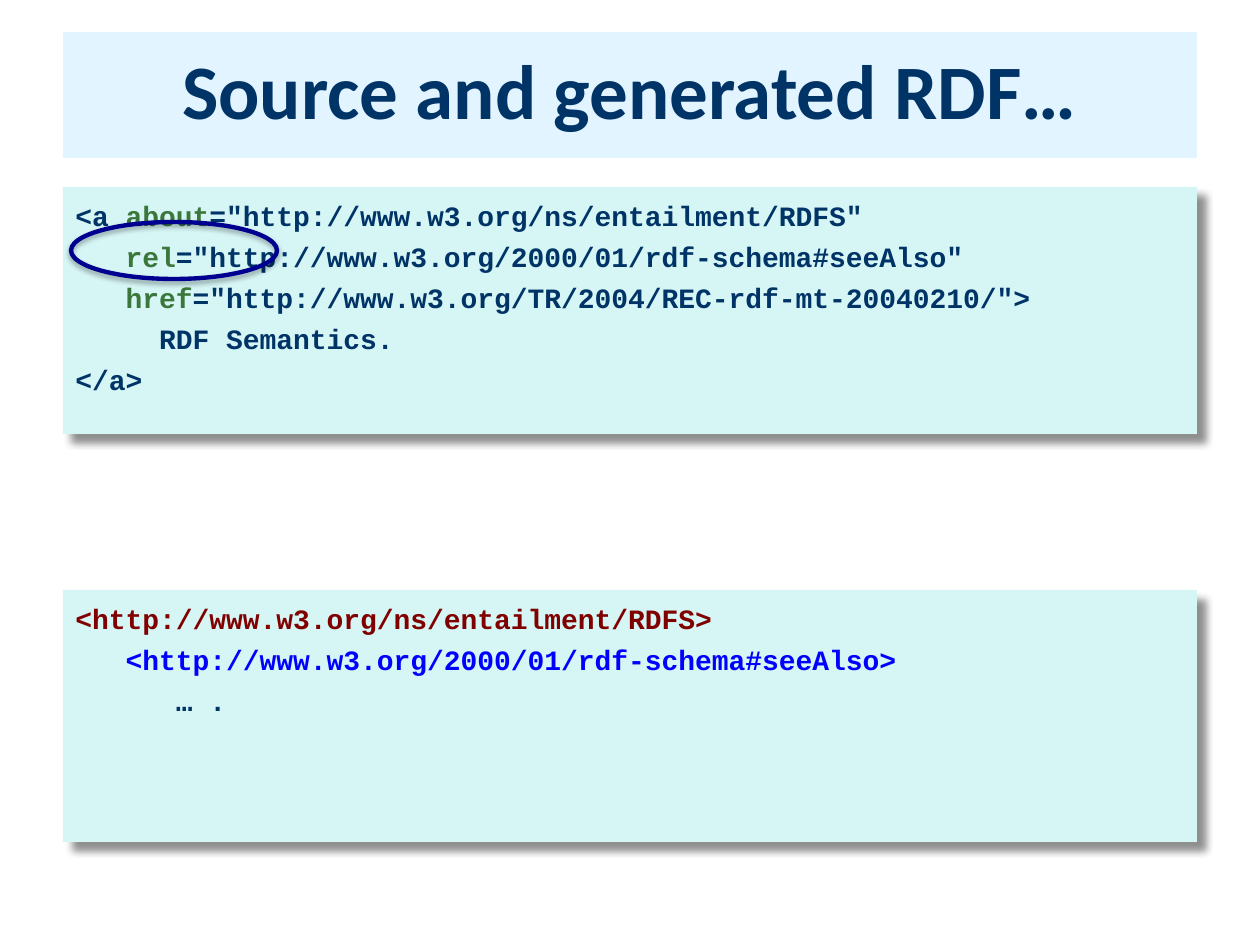
import pptx
import pptx.dml.color
import pptx.enum.shapes
import pptx.enum.text
import pptx.oxml
import pptx.oxml.ns
import pptx.util
from dataclasses import dataclass

PX = 914400 / 126


@dataclass(frozen=True)
class Theme:
    title_fill: str = "E1F4FF"
    code_fill: str = "D6F5F5"
    text: str = "003366"
    attribute: str = "3B773B"
    subject: str = "800000"
    predicate: str = "0000FF"
    ring: str = "000090"
    title_font: str = "Calibri"
    code_font: str = "Courier New"
    title_size: int = 44
    code_size: int = 16
    code_gap: float = 4.2


THEME = Theme()


def px(value):
    return pptx.util.Emu(round(value * PX))


def rgb(value):
    return pptx.dml.color.RGBColor.from_string(value)


def fill_with(shape, color):
    shape.fill.solid()
    shape.fill.fore_color.rgb = rgb(color)


def add_text(paragraph, text, font=THEME.code_font, size=THEME.code_size,
             color=THEME.text, bold=True):
    run = paragraph.add_run()
    run.text = text
    run.font.name = font
    run.font.size = pptx.util.Pt(size)
    run.font.color.rgb = rgb(color)
    run.font.bold = bold


def add_shadow(shape, opacity, blur, distance, angle):
    """Opacity in percent, blur and distance in points, angle in degrees."""
    shape.shadow.inherit = False
    effects = shape._element.spPr.find(pptx.oxml.ns.qn("a:effectLst"))
    effects.append(pptx.oxml.parse_xml(
        f'<a:outerShdw {pptx.oxml.ns.nsdecls("a")} blurRad="{pptx.util.Pt(blur)}" '
        f'dist="{pptx.util.Pt(distance)}" dir="{angle * 60000}" algn="tl" '
        f'rotWithShape="0"><a:srgbClr val="000000">'
        f'<a:alpha val="{opacity * 1000}"/></a:srgbClr></a:outerShdw>'))


def set_title(slide, text):
    title = slide.shapes.title
    title.left, title.top, title.width, title.height = map(px, (63, 32, 1134, 126))
    fill_with(title, THEME.title_fill)
    title.text_frame.vertical_anchor = pptx.enum.text.MSO_ANCHOR.MIDDLE
    paragraph = title.text_frame.paragraphs[0]
    paragraph.alignment = pptx.enum.text.PP_ALIGN.CENTER
    paragraph.line_spacing = 0.9
    add_text(paragraph, text, font=THEME.title_font, size=THEME.title_size)


def add_code_panel(slide, top, height, lines):
    """Each line is a list of (text, color) pieces."""
    panel = slide.shapes.add_shape(pptx.enum.shapes.MSO_SHAPE.RECTANGLE,
                                   *map(px, (63, top, 1134, height)))
    fill_with(panel, THEME.code_fill)
    panel.line.fill.background()
    add_shadow(panel, opacity=43, blur=4, distance=7, angle=45)
    frame = panel.text_frame
    frame.word_wrap = True
    frame.vertical_anchor = pptx.enum.text.MSO_ANCHOR.TOP
    frame.margin_top = px(12)
    for index, pieces in enumerate(lines):
        paragraph = frame.add_paragraph() if index else frame.paragraphs[0]
        paragraph.alignment = pptx.enum.text.PP_ALIGN.LEFT
        if index:
            paragraph.space_before = pptx.util.Pt(THEME.code_gap)
        for text, color in pieces:
            add_text(paragraph, text, color=color)


def add_ring(slide, left, top, width, height):
    ring = slide.shapes.add_shape(pptx.enum.shapes.MSO_SHAPE.OVAL,
                                  *map(px, (left, top, width, height)))
    ring.fill.background()
    ring.line.color.rgb = rgb(THEME.ring)
    ring.line.width = pptx.util.Pt(2.5)
    add_shadow(ring, opacity=35, blur=3.1, distance=1.8, angle=90)


def main():
    presentation = pptx.Presentation()
    presentation.slide_width, presentation.slide_height = px(1260), px(945)
    slide = presentation.slides.add_slide(presentation.slide_layouts[5])
    set_title(slide, "Source and generated RDF…")

    # Source markup
    add_code_panel(slide, 187, 247, [
        [("<a ", THEME.text), ("about", THEME.attribute),
         ('="http://www.w3.org/ns/entailment/RDFS"', THEME.text)],
        [("   rel", THEME.attribute),
         ('="http://www.w3.org/2000/01/rdf-schema#seeAlso"', THEME.text)],
        [("   href", THEME.attribute),
         ('="http://www.w3.org/TR/2004/REC-rdf-mt-20040210/">', THEME.text)],
        [("     RDF Semantics.", THEME.text)],
        [("</a>", THEME.text)],
    ])

    # Generated triples
    add_code_panel(slide, 590, 252, [
        [("<http://www.w3.org/ns/entailment/RDFS>", THEME.subject)],
        [("   ", THEME.text),
         ("<http://www.w3.org/2000/01/rdf-schema#seeAlso>", THEME.predicate)],
        [("      … .", THEME.text)],
    ])

    # Highlight around the rel attribute
    add_ring(slide, 71, 222, 206, 57)
    presentation.save("out.pptx")


if __name__ == "__main__":
    main()
